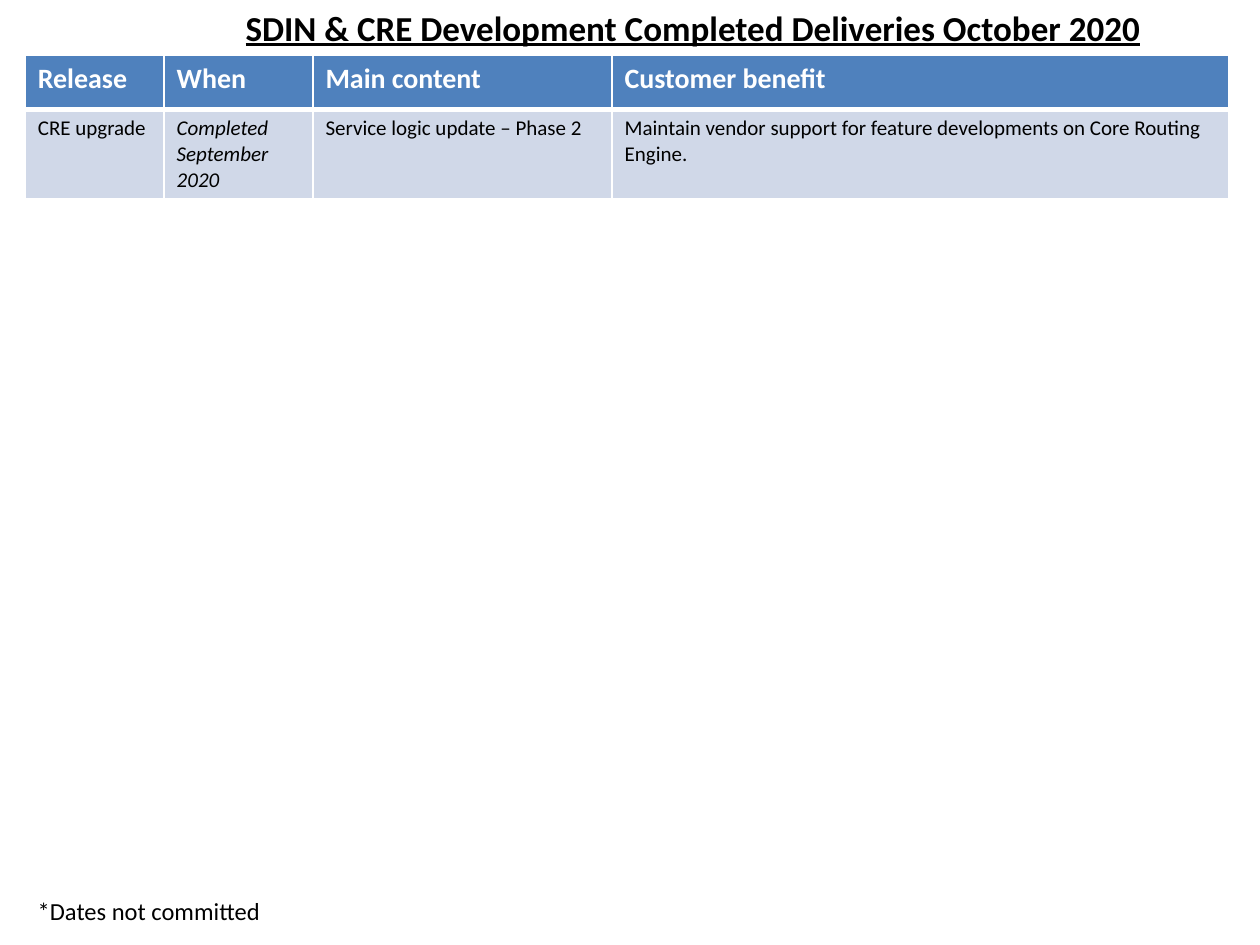
from dataclasses import dataclass

from lxml import etree
from pptx import Presentation
from pptx.dml.color import RGBColor
from pptx.enum.text import MSO_AUTO_SIZE
from pptx.oxml.ns import qn
from pptx.util import Cm, Pt

FIT_SHAPE = MSO_AUTO_SIZE.SHAPE_TO_FIT_TEXT
BLACK = RGBColor(0x00, 0x00, 0x00)
WHITE = RGBColor(0xFF, 0xFF, 0xFF)
HEADER_BLUE = RGBColor(0x4F, 0x81, 0xBD)
BODY_BLUE = RGBColor(0xD0, 0xD8, 0xE8)
FONT = "Calibri"
LEFT = 0.51
TITLE_HEIGHT = 1.12
THIN, THICK = Pt(1), Pt(3)

TITLE_FORMAT = {"size": Pt(20), "bold": True, "underline": True}
NOTE_FORMAT = {"size": Pt(14)}
HEADER_FORMAT = {"size": Pt(16), "bold": True}
BODY_FORMAT = {"size": Pt(12), "bold": False}


@dataclass
class Label:
    text: str
    left: float
    top: float
    width: float
    height: float
    font_format: dict


@dataclass
class Column:
    width: float
    heading: str
    entry: str
    italic: bool = False


LABELS = [
    Label("SDIN & CRE Development Completed Deliveries October 2020",
          4.7, 0, 20.07, TITLE_HEIGHT, TITLE_FORMAT),
    Label("*Dates not committed", LEFT, 17.93, 14.6, 0.86, NOTE_FORMAT),
]
COLUMNS = [
    Column(2.8, "Release", "CRE upgrade"),
    Column(3.0, "When", "Completed September 2020", italic=True),
    Column(6.03, "Main content", "Service logic update – Phase 2"),
    Column(12.43, "Customer benefit",
           "Maintain vendor support for feature developments on Core Routing Engine."),
]
ROW_HEIGHTS = [1.09, 1.78]


def write_text(frame, text: str, color: RGBColor, font_format: dict) -> None:
    span = frame.paragraphs[0].add_run()
    span.text = text
    span.font.name = FONT
    span.font.color.rgb = color
    for name, value in font_format.items():
        setattr(span.font, name, value)


def add_label(page, label: Label) -> None:
    box = page.shapes.add_textbox(
        Cm(label.left), Cm(label.top), Cm(label.width), Cm(label.height))
    box.text_frame.word_wrap = True
    box.text_frame.auto_size = FIT_SHAPE
    write_text(box.text_frame, label.text, BLACK, label.font_format)


def set_borders(cell, widths: dict) -> None:
    properties = cell._tc.get_or_add_tcPr()
    for side, width in widths.items():
        line = etree.SubElement(properties, qn(f"a:ln{side}"), w=str(width))
        fill = etree.SubElement(line, qn("a:solidFill"))
        etree.SubElement(fill, qn("a:srgbClr"), val=str(WHITE))


def fill_cell(cell, text: str, color: RGBColor, background: RGBColor,
              font_format: dict, top: int, bottom: int) -> None:
    set_borders(cell, {"L": THIN, "R": THIN, "T": top, "B": bottom})
    cell.fill.solid()
    cell.fill.fore_color.rgb = background
    write_text(cell.text_frame, text, color, font_format)


def add_deliveries(page) -> None:
    width = sum(column.width for column in COLUMNS)
    table = page.shapes.add_table(
        len(ROW_HEIGHTS), len(COLUMNS), Cm(LEFT), Cm(TITLE_HEIGHT),
        Cm(width), Cm(sum(ROW_HEIGHTS))).table
    table.horz_banding = False
    for row, height in zip(table.rows, ROW_HEIGHTS):
        row.height = Cm(height)
    for index, column in enumerate(COLUMNS):
        table.columns[index].width = Cm(column.width)
        fill_cell(table.cell(0, index), column.heading, WHITE, HEADER_BLUE,
                  HEADER_FORMAT, THIN, THICK)
        fill_cell(table.cell(1, index), column.entry, BLACK, BODY_BLUE,
                  {**BODY_FORMAT, "italic": column.italic}, THICK, THIN)


def main() -> None:
    deck = Presentation()
    deck.slide_width, deck.slide_height = Cm(25.4), Cm(19.05)
    page = deck.slides.add_slide(deck.slide_layouts[6])
    add_deliveries(page)
    for label in LABELS:
        add_label(page, label)
    deck.save("out.pptx")


if __name__ == "__main__":
    main()
